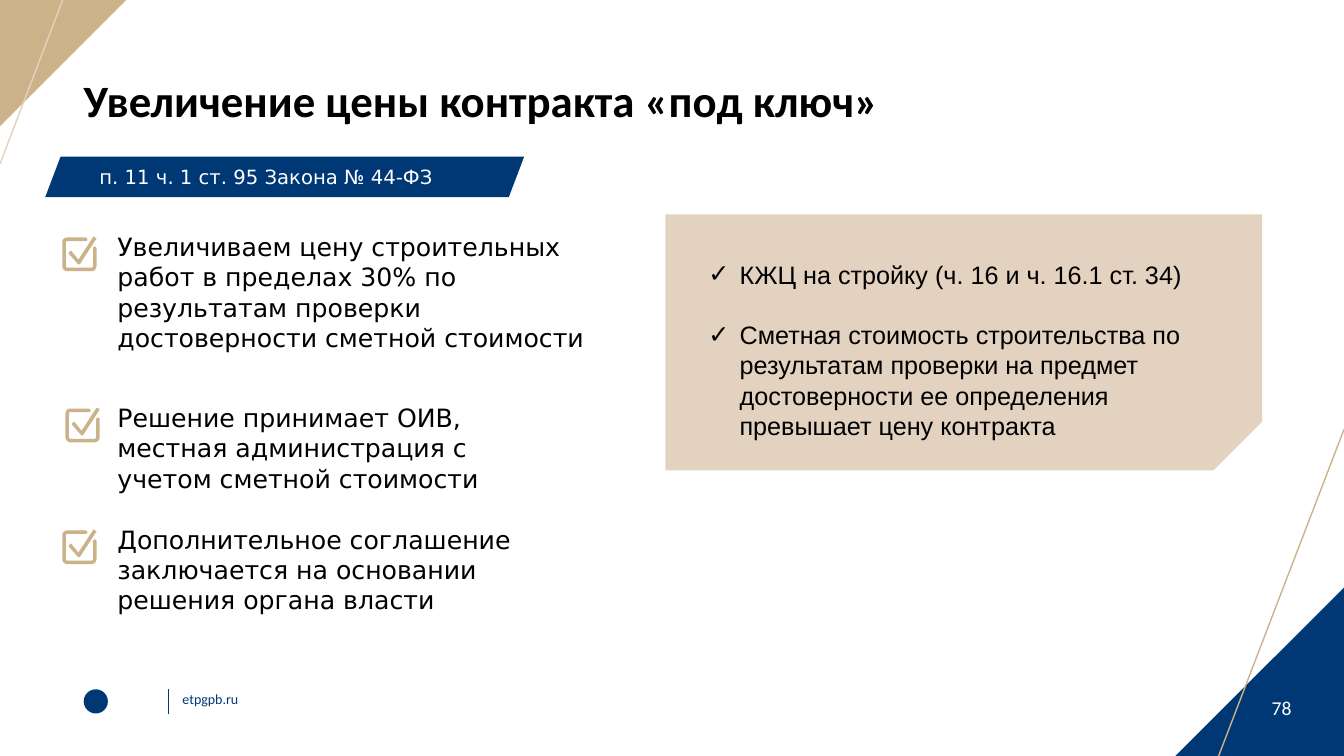
from lxml import etree
from pptx import Presentation
from pptx.dml.color import RGBColor
from pptx.enum.shapes import MSO_CONNECTOR, MSO_SHAPE
from pptx.enum.text import MSO_ANCHOR, PP_ALIGN
from pptx.oxml.ns import qn
from pptx.util import Cm, Pt

# Content: lengths in centimetres
NAVY, GOLD, SAND, BLACK, WHITE = "003876", "CCB289", "E3D2C0", "000000", "FFFFFF"
TITLE = "Увеличение цены контракта «под ключ»"
LAW = "п. 11 ч. 1 ст. 95 Закона № 44-ФЗ"
SITE = "etpgpb.ru"
PAGE = "78"
STEPS = [  # text, text top, text width, icon left
    ("Увеличиваем цену строительных работ в пределах 30% по результатам "
     "проверки достоверности сметной стоимости", 5.7, 13.03, 1.57),
    ("Решение принимает ОИВ, местная администрация с учетом сметной стоимости",
     10.01, 11.2, 1.65),
    ("Дополнительное соглашение заключается на основании решения органа власти",
     13.08, 11.2, 1.57),
]
CONDITIONS = [
    "КЖЦ на стройку (ч. 16 и ч. 16.1 ст. 34)",
    "Сметная стоимость строительства по результатам проверки на предмет "
    "достоверности ее определения превышает цену контракта",
]

# Checkbox outlines: pairs are corners, six numbers are a Bezier curve
ICON_UNIT = Cm(2.54) / 1000
ICON_DROP = 0.26
CHECK_BOX = [
    (50, 10), (230, 10), (240, 10, 250, 20, 250, 28), (250, 38, 240, 45, 230, 45),
    (50, 45), (42, 45, 35, 50, 35, 60), (35, 290), (35, 300, 40, 310, 50, 310),
    (290, 310), (300, 310, 305, 300, 305, 290), (305, 120),
    (305, 110, 313, 100, 322, 100), (332, 100, 340, 110, 340, 120),
    (340, 290), (340, 320, 320, 345, 290, 345), (50, 345),
    (20, 345, 0, 320, 0, 290), (0, 60), (0, 30, 20, 10, 50, 10),
]
CHECK_TICK = [(310, 0), (340, 20), (178, 270), (173, 278, 160, 280, 152, 270),
              (60, 165), (87, 140), (160, 230)]

presentation = Presentation()
presentation.slide_width, presentation.slide_height = Cm(33.87), Cm(19.05)
slide = presentation.slides.add_slide(presentation.slide_layouts[6])
shapes = slide.shapes


def color(value):
    return RGBColor.from_string(value)


def paint(shape, fill):
    shape.shadow.inherit = False
    shape.fill.solid()
    shape.fill.fore_color.rgb = color(fill)
    shape.line.fill.background()


def add_figure(kind, box, fill, adjustment=None, rotation=0):
    shape = shapes.add_shape(kind, *map(Cm, box))
    paint(shape, fill)
    if adjustment is not None:
        shape.adjustments[0] = adjustment
    shape.rotation = rotation
    return shape


def add_line(start, end, line_color, width):
    line = shapes.add_connector(MSO_CONNECTOR.STRAIGHT, *map(Cm, start + end))
    line.line.color.rgb = color(line_color)
    line.line.width = Pt(width)
    etree.SubElement(line._element.spPr, qn("a:effectLst"))


def add_run(paragraph, text, size, font, font_color, bold=False):
    run = paragraph.add_run()
    run.text = text
    run.font.size, run.font.name, run.font.bold = Pt(size), font, bold
    run.font.color.rgb = color(font_color)


def add_text_box(box, margins=(0, 0)):
    frame = shapes.add_textbox(*map(Cm, box)).text_frame
    frame.word_wrap = True
    frame.margin_left = frame.margin_right = Cm(margins[0])
    frame.margin_top = frame.margin_bottom = Cm(margins[1])
    return frame


def add_bullet(paragraph, mark, indent, font):
    properties = paragraph._p.get_or_add_pPr()
    properties.set("marL", str(Cm(indent)))
    properties.set("indent", str(-Cm(indent)))
    etree.SubElement(properties, qn("a:buFont")).set("typeface", font)
    etree.SubElement(properties, qn("a:buChar")).set("char", mark)


def flatten(outline, steps=6):
    points = []
    for item in outline:
        if len(item) == 2:
            points.append(item)
            continue
        x0, y0 = points[-1]
        x1, y1, x2, y2, x3, y3 = item
        for step in range(1, steps + 1):
            t = step / steps
            a, b, c, d = (1 - t) ** 3, 3 * t * (1 - t) ** 2, 3 * t * t * (1 - t), t ** 3
            points.append((round(a * x0 + b * x1 + c * x2 + d * x3),
                           round(a * y0 + b * y1 + c * y2 + d * y3)))
    return points


def add_check_icon(left, top):
    frame, tick = flatten(CHECK_BOX), flatten(CHECK_TICK)
    builder = shapes.build_freeform(*frame[0], scale=ICON_UNIT)
    builder.add_line_segments(frame[1:], close=True)
    builder.move_to(*tick[0])
    builder.add_line_segments(tick[1:], close=True)
    paint(builder.convert_to_shape(Cm(left), Cm(top)), GOLD)


# Corner decoration
add_figure(MSO_SHAPE.ISOSCELES_TRIANGLE, (29.62, 14.81, 4.25, 4.24), NAVY, 1)
add_line((33.87, 10.82), (30.71, 19.05), GOLD, 1)
add_figure(MSO_SHAPE.ISOSCELES_TRIANGLE, (0, 0, 3.18, 3.18), GOLD, 1, 180)
add_line((1.58, 0), (0, 4.13), SAND, 1)

# Footer
page_frame = add_text_box((31.27, 17.22, 2.06, 0.91))
page_frame.vertical_anchor = MSO_ANCHOR.BOTTOM
page_frame.paragraphs[0].alignment = PP_ALIGN.CENTER
add_run(page_frame.paragraphs[0], PAGE, 14, "Calibri", WHITE)
add_figure(MSO_SHAPE.OVAL, (2.11, 17.37, 0.61, 0.61), NAVY)
add_line((4.24, 17.37), (4.24, 17.98), NAVY, 0.5)
add_run(add_text_box((4.6, 17.4, 2.79, 0.43)).paragraphs[0], SITE, 10, "Calibri", NAVY)

# Title
title_paragraph = add_text_box((2.11, 1.98, 29.62, 1.22)).paragraphs[0]
title_paragraph.line_spacing = 0.9
add_run(title_paragraph, TITLE, 32, "Calibri", BLACK, bold=True)

# Law reference banner
banner = add_figure(MSO_SHAPE.PARALLELOGRAM, (1.14, 3.95, 12.07, 1.02), NAVY, 0.38)
banner_frame = banner.text_frame
banner_frame.word_wrap = True
banner_frame.vertical_anchor = MSO_ANCHOR.MIDDLE
banner_frame.margin_left = banner_frame.margin_right = Cm(0.2)
banner_frame.margin_top = banner_frame.margin_bottom = Cm(0.1)
banner_frame.paragraphs[0].alignment = PP_ALIGN.LEFT
add_run(banner_frame.paragraphs[0], LAW, 14, "DejaVu Sans", WHITE)

# Steps with checkboxes
for text, top, width, icon_left in STEPS:
    step_frame = add_text_box((2.71, top, width, 2.57), (0.25, 0.13))
    add_run(step_frame.paragraphs[0], text, 18, "DejaVu Sans", BLACK)
    add_check_icon(icon_left, top + ICON_DROP)

# Conditions panel
add_figure(MSO_SHAPE.SNIP_1_RECTANGLE, (21.06, 1.11, 6.45, 15.04), SAND, 0.19, 90)
panel_frame = add_text_box((17.6, 6.4, 13.56, 4.88), (0.25, 0.13))
for index, condition in enumerate(CONDITIONS):
    paragraph = panel_frame.add_paragraph() if index else panel_frame.paragraphs[0]
    if index:
        paragraph.space_before = Pt(21.5)
    add_bullet(paragraph, "✓", 0.79, "DejaVu Sans")
    add_run(paragraph, condition, 18, "Arial", BLACK)

presentation.save("out.pptx")
